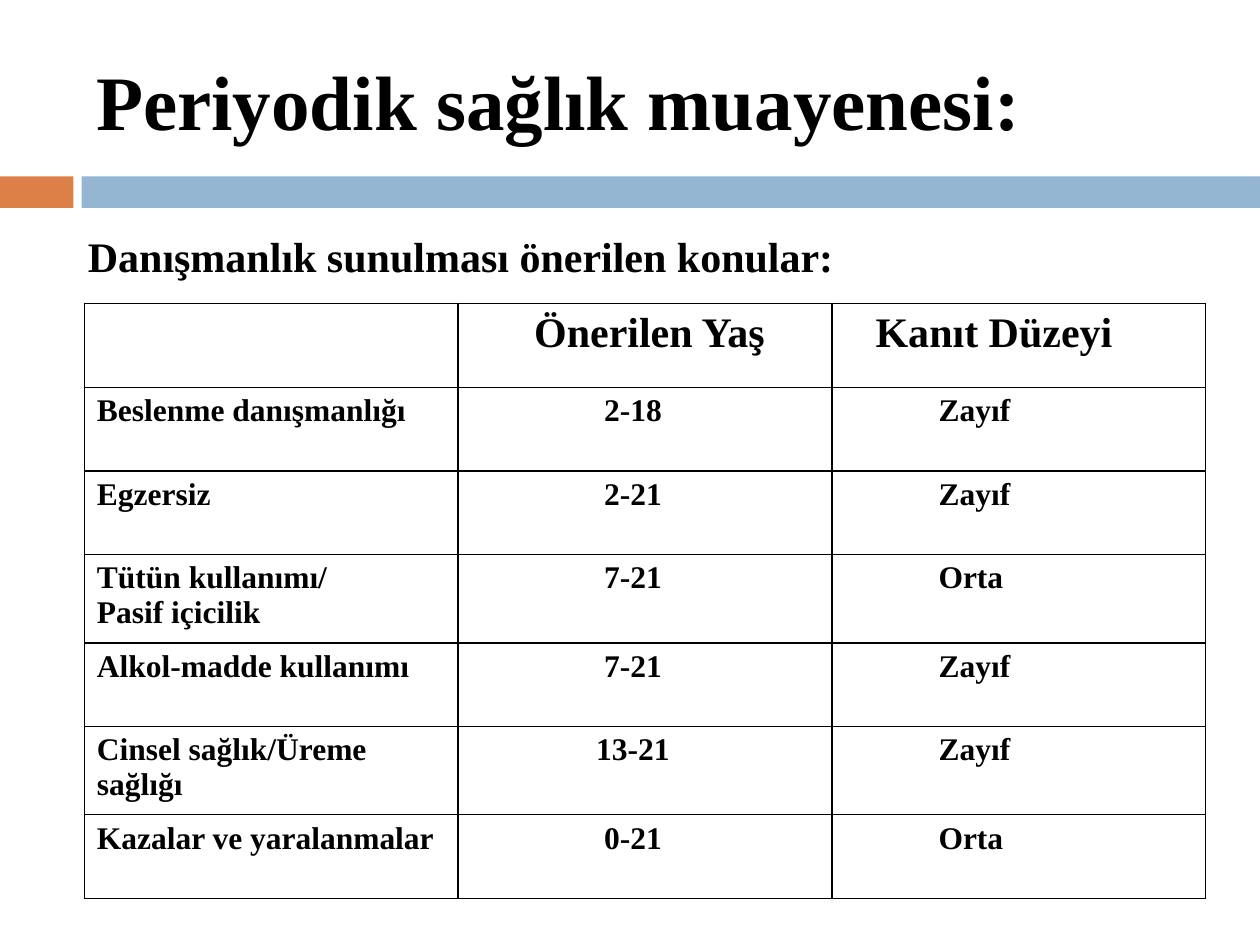
from pptx import Presentation
from pptx.dml.color import RGBColor
from pptx.enum.shapes import MSO_SHAPE
from pptx.enum.text import MSO_ANCHOR, PP_ALIGN
from pptx.oxml import parse_xml
from pptx.oxml.ns import nsdecls
from pptx.util import Pt

BLACK = RGBColor(0x00, 0x00, 0x00)
ORANGE = RGBColor(0xDD, 0x80, 0x47)
BLUE = RGBColor(0x94, 0xB6, 0xD2)
FONT = "Times New Roman"
INSET = 7.2

HEADINGS = ("", "Önerilen Yaş", "Kanıt Düzeyi")
TOPICS = (
    ("Beslenme danışmanlığı", "2-18", "Zayıf"),
    ("Egzersiz", "2-21", "Zayıf"),
    ("Tütün kullanımı/\nPasif içicilik", "7-21", "Orta"),
    ("Alkol-madde kullanımı", "7-21", "Zayıf"),
    ("Cinsel sağlık/Üreme sağlığı", "13-21", "Zayıf"),
    ("Kazalar ve yaralanmalar", "0-21", "Orta"),
)
TWO_LINE_ROWS = (3, 5)
HEADING_INDENTS = (INSET, 43.5, 25)
TOPIC_INDENTS = (INSET, INSET, 61)


def write_bold(frame, text, size):
    frame.text = text
    for paragraph in frame.paragraphs:
        paragraph.font.size = Pt(size)
        for run in paragraph.runs:
            run.font.name = FONT
            run.font.size = Pt(size)
            run.font.bold = True
            run.font.color.rgb = BLACK


def add_band(slide, left, top, width, height):
    """Orange block, a gap, then the blue bar to the far edge."""
    block, gap = 42, 4.6
    bar_left = block + gap
    for x, w, color in ((left, block, ORANGE),
                        (left + bar_left, width - bar_left, BLUE)):
        bar = slide.shapes.add_shape(MSO_SHAPE.RECTANGLE, Pt(x), Pt(top), Pt(w), Pt(height))
        bar.shadow.inherit = False
        bar.fill.solid()
        bar.fill.fore_color.rgb = color
        bar.line.fill.background()


def add_text(slide, left, top, width, height, text, size, anchor, indent=INSET, top_inset=3.6):
    frame = slide.shapes.add_textbox(Pt(left), Pt(top), Pt(width), Pt(height)).text_frame
    frame.word_wrap = True
    frame.vertical_anchor = anchor
    frame.margin_left = Pt(indent)
    frame.margin_top = Pt(top_inset)
    write_bold(frame, text, size)


def add_borders(cell):
    properties = cell._tc.get_or_add_tcPr()
    for position, side in enumerate(("lnL", "lnR", "lnT", "lnB")):
        properties.insert(position, parse_xml(
            f'<a:{side} {nsdecls("a")} w="{Pt(1)}"><a:solidFill>'
            f'<a:srgbClr val="{BLACK}"/></a:solidFill></a:{side}>'))


def add_topics_table(slide, left, top, width, height):
    rows = (HEADINGS,) + TOPICS
    table = slide.shapes.add_table(
        len(rows), len(HEADINGS), Pt(left), Pt(top), Pt(width), Pt(height)).table
    table.first_row = False
    table.horz_banding = False
    for column in table.columns:
        column.width = Pt(width / len(HEADINGS))

    # Two-line topics need slightly taller rows; the rest share the height
    tall = 49.7
    normal = (height - tall * len(TWO_LINE_ROWS)) / (len(rows) - len(TWO_LINE_ROWS))
    for r, texts in enumerate(rows):
        table.rows[r].height = Pt(tall if r in TWO_LINE_ROWS else normal)
        indents, size = (TOPIC_INDENTS, 18) if r else (HEADING_INDENTS, 24)
        for c, text in enumerate(texts):
            cell = table.cell(r, c)
            cell.fill.background()
            cell.margin_left = Pt(indents[c])
            write_bold(cell.text_frame, text, size)
            if r and c == 1:
                # Ages are centred a little left of the column middle
                cell.margin_right = Pt(21)
                cell.text_frame.paragraphs[0].alignment = PP_ALIGN.CENTER
            add_borders(cell)


def main():
    prs = Presentation()
    prs.slide_width, prs.slide_height = Pt(720), Pt(540)
    slide = prs.slides.add_slide(prs.slide_layouts[6])

    # Band under the title
    add_band(slide, 0, 100.8, 720, 18)
    # Title and subtitle
    add_text(slide, 48, 18, 642, 78, "Periyodik sağlık muayenesi:", 44, MSO_ANCHOR.MIDDLE)
    add_text(slide, 31, 126, 659, 388, "Danışmanlık sunulması önerilen konular:", 24,
             MSO_ANCHOR.TOP, indent=19.2, top_inset=6)
    # Counselling topics
    add_topics_table(slide, 48.2, 173.5, 640.8, 338.4)

    prs.save("out.pptx")


if __name__ == "__main__":
    main()
